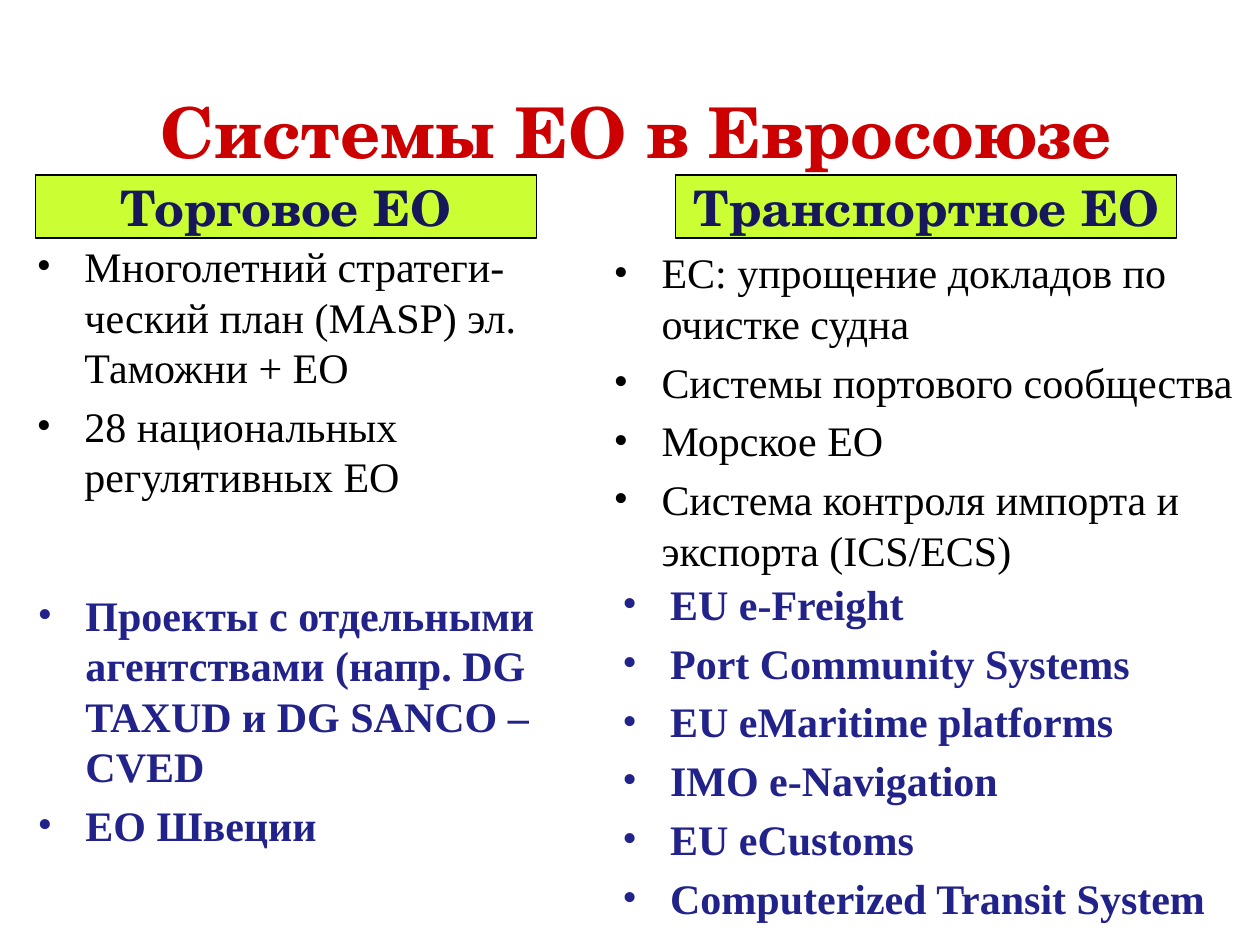
from dataclasses import dataclass

from lxml import etree
from pptx import Presentation
from pptx.dml.color import RGBColor
from pptx.enum.shapes import MSO_SHAPE
from pptx.enum.text import MSO_ANCHOR, MSO_AUTO_SIZE, PP_ALIGN
from pptx.oxml.ns import qn
from pptx.util import Inches, Pt

CENTER, LEFT = PP_ALIGN.CENTER, PP_ALIGN.LEFT
MIDDLE, TOP = MSO_ANCHOR.MIDDLE, MSO_ANCHOR.TOP
NO_AUTOFIT = MSO_AUTO_SIZE.NONE
RECTANGLE = MSO_SHAPE.RECTANGLE

COLORS = {"title": "CC0000", "heading": "17175C", "band": "CCFF33",
          "system": "000000", "project": "22228B"}
HEADING_FONT = "TeX Gyre Schola"
LIST_FONT = "Times New Roman"


@dataclass
class Area:
    left: float
    top: float
    width: float
    height: float

    def lengths(self):
        return [Inches(n) for n in (self.left, self.top, self.width, self.height)]


@dataclass
class Column:
    heading: str
    heading_area: Area
    systems: list[str]
    systems_area: Area
    projects: list[str]
    projects_area: Area


COLUMNS = [
    Column(
        "Торговое ЕО", Area(0.28, 1.39, 3.98, 0.5),
        ["Многолетний стратеги-ческий план (MASP) эл. Таможни + ЕО",
         "28 национальных регулятивных ЕО"],
        Area(0.19, 1.86, 4.42, 2.27),
        ["Проекты с отдельными агентствами (напр. DG TAXUD и DG SANCO – CVED",
         "ЕО Швеции"],
        Area(0.2, 4.63, 4.42, 2.27)),
    Column(
        "Транспортное ЕО", Area(5.36, 1.39, 3.98, 0.5),
        ["ЕС: упрощение докладов по очистке судна",
         "Системы портового сообщества",
         "Морское ЕО",
         "Система контроля импорта и экспорта (ICS/ECS)"],
        Area(4.77, 1.91, 5.23, 2.39),
        ["EU e-Freight", "Port Community Systems", "ЕU eMaritime platforms",
         "IMO e-Navigation", "EU eCustoms", "Computerized Transit System"],
        Area(4.84, 4.54, 4.92, 2.91)),
]


def place(shape, area: Area) -> None:
    shape.left, shape.top, shape.width, shape.height = area.lengths()


def add_text(para, text: str, size: int, font: str, color: str, bold: bool) -> None:
    run = para.add_run()
    run.text = text
    run.font.size = Pt(size)
    run.font.name = font
    run.font.bold = bold
    run.font.color.rgb = RGBColor.from_string(COLORS[color])


def add_bullet(para) -> None:
    properties = para._p.get_or_add_pPr()
    properties.set("marL", str(Inches(0.38)))
    properties.set("indent", str(Inches(-0.38)))
    etree.SubElement(properties, qn("a:buFont"), typeface=LIST_FONT)
    etree.SubElement(properties, qn("a:buChar"), char="•")


def fill_list(box, items: list[str], color: str, bold: bool) -> None:
    frame = box.text_frame
    frame.word_wrap = True
    frame.auto_size = NO_AUTOFIT
    frame.vertical_anchor = TOP
    for number, item in enumerate(items):
        para = frame.add_paragraph() if number else frame.paragraphs[0]
        add_bullet(para)
        para.alignment = LEFT
        para.space_before = Pt(4.8 if number else 0)
        add_text(para, item, 24, LIST_FONT, color, bold)


def fill_title(title) -> None:
    place(title, Area(0.1, 0.68, 9.9, 0.71))
    frame = title.text_frame
    frame.auto_size = NO_AUTOFIT
    frame.vertical_anchor = MIDDLE
    para = frame.paragraphs[0]
    para.alignment = CENTER
    add_text(para, "Системы ЕО в Евросоюзе", 40, HEADING_FONT, "title", True)


def add_heading(page, column: Column) -> None:
    band = page.shapes.add_shape(RECTANGLE, *column.heading_area.lengths())
    band.shadow.inherit = False
    band.fill.solid()
    band.fill.fore_color.rgb = RGBColor.from_string(COLORS["band"])
    band.line.color.rgb = RGBColor.from_string(COLORS["system"])
    band.line.width = Pt(0.75)
    frame = band.text_frame
    frame.word_wrap = False
    frame.vertical_anchor = MIDDLE
    para = frame.paragraphs[0]
    para.alignment = CENTER
    add_text(para, column.heading, 28, HEADING_FONT, "heading", True)


def main() -> None:
    deck = Presentation()
    deck.slide_width, deck.slide_height = Inches(10), Inches(7.5)
    page = deck.slides.add_slide(deck.slide_layouts.get_by_name("Two Content"))
    title, *bodies = page.placeholders
    fill_title(title)
    for body, column in zip(bodies, COLUMNS):
        place(body, column.systems_area)
        fill_list(body, column.systems, "system", False)
        add_heading(page, column)
        box = page.shapes.add_textbox(*column.projects_area.lengths())
        fill_list(box, column.projects, "project", True)
    deck.save("out.pptx")


if __name__ == "__main__":
    main()
